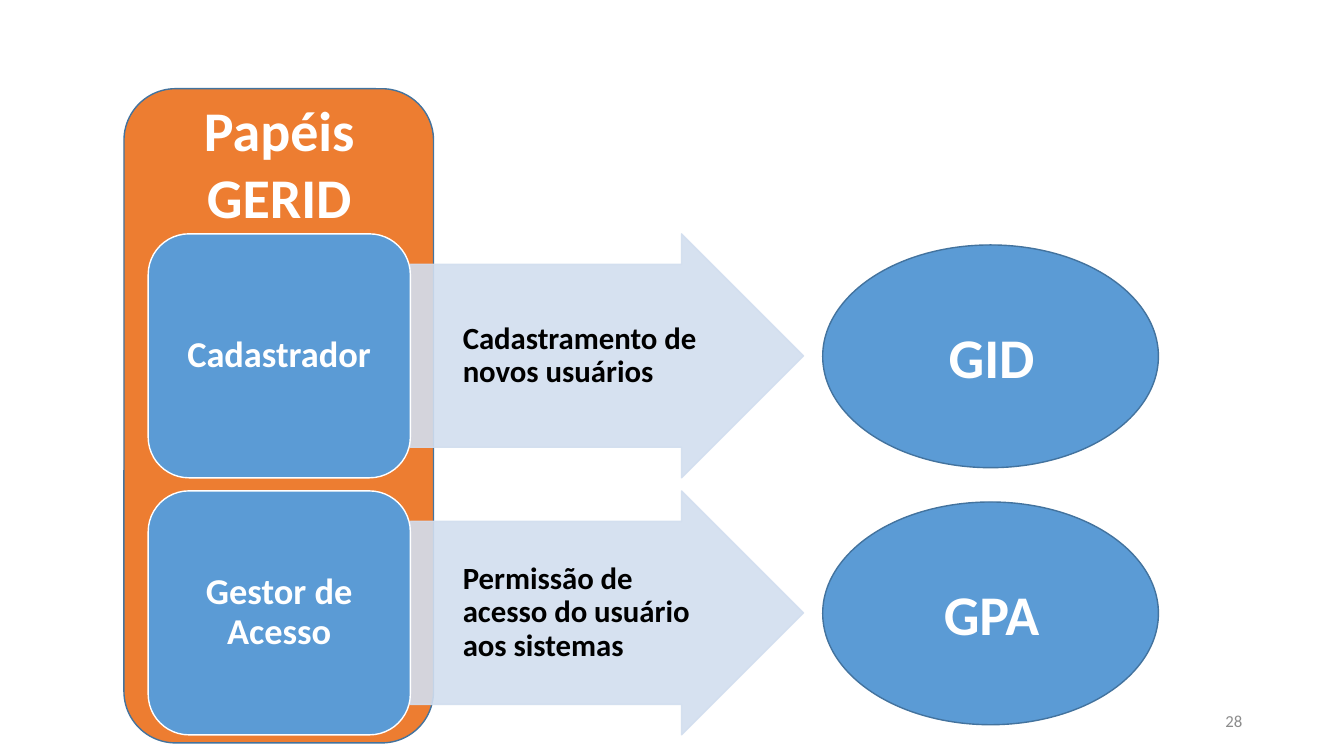
from dataclasses import dataclass

from lxml import etree
from pptx import Presentation
from pptx.dml.color import RGBColor
from pptx.enum.shapes import MSO_SHAPE
from pptx.enum.text import MSO_ANCHOR, MSO_AUTO_SIZE, PP_ALIGN
from pptx.oxml.ns import qn
from pptx.util import Inches, Pt

ROUNDED, ARROW, OVAL = MSO_SHAPE.ROUNDED_RECTANGLE, MSO_SHAPE.RIGHT_ARROW, MSO_SHAPE.OVAL
LEFT, CENTER, RIGHT = PP_ALIGN.LEFT, PP_ALIGN.CENTER, PP_ALIGN.RIGHT
TOP, MIDDLE = MSO_ANCHOR.TOP, MSO_ANCHOR.MIDDLE
FIT_SHAPE = MSO_AUTO_SIZE.SHAPE_TO_FIT_TEXT


@dataclass(frozen=True)
class Theme:
    """Colours, font and type sizes of the slide."""
    font: str = "Calibri"
    orange: str = "ED7D31"
    blue: str = "5B9BD5"
    outline: str = "43739E"
    pale: str = "D2DEEF"
    white: str = "FFFFFF"
    black: str = "000000"
    grey: str = "8C8C8C"
    title: int = 40
    role: int = 26
    task: int = 22
    number: int = 12


THEME = Theme()
FIRST_ROW, ROW_STEP = 2.32, 2.55
ROWS = [
    ("Cadastrador", "Cadastramento de novos usuários", "GID"),
    ("Gestor de Acesso", "Permissão de acesso do usuário aos sistemas", "GPA"),
]


def write(shape, text, size, color=THEME.white, bold=True, align=CENTER,
          anchor=TOP, margins=(0.1, 0.05), indent=0, spacing=1.0):
    """Put one formatted paragraph into a shape."""
    frame = shape.text_frame
    frame.word_wrap = True
    frame.vertical_anchor = anchor
    frame.margin_left = frame.margin_right = Inches(margins[0])
    frame.margin_top = frame.margin_bottom = Inches(margins[1])
    paragraph = frame.paragraphs[0]
    paragraph.alignment = align
    paragraph.line_spacing = spacing
    if indent:
        properties = paragraph._p.get_or_add_pPr()
        properties.set("marL", str(Inches(indent)))
        properties.set("indent", "0")
    run = paragraph.add_run()
    run.text = text
    run.font.name = THEME.font
    run.font.size = Pt(size)
    run.font.bold = bold
    run.font.color.rgb = RGBColor.from_string(color)


def add_panel(slide, kind, box, fill, line, adjustments=(), opacity=100):
    """Add a filled and outlined preset shape."""
    panel = slide.shapes.add_shape(kind, *map(Inches, box))
    panel.shadow.inherit = False
    panel.fill.solid()
    panel.fill.fore_color.rgb = RGBColor.from_string(fill)
    panel.line.color.rgb = RGBColor.from_string(line)
    panel.line.width = Pt(1)
    for index, value in enumerate(adjustments):
        panel.adjustments[index] = value
    if opacity < 100:
        for color in panel._element.spPr.iter(qn("a:srgbClr")):
            etree.SubElement(color, qn("a:alpha")).set("val", str(opacity * 1000))
    return panel


def add_label(slide, box, text, size, grow=True, **style):
    """Add a text box with one paragraph."""
    label = slide.shapes.add_textbox(*map(Inches, box))
    write(label, text, size, **style)
    if grow:
        label.text_frame.auto_size = FIT_SHAPE


def add_role_row(slide, top, role, task, system):
    """Add a role, the arrow with its task and the system it leads to."""
    task_arrow = add_panel(slide, ARROW, (4.07, top, 3.9, 2.42), THEME.pale,
                           THEME.pale, (0.75, 0.5), opacity=90)
    write(task_arrow, task, THEME.task, color=THEME.black, align=LEFT,
          anchor=MIDDLE, margins=(0.02, 0.02), indent=0.5, spacing=0.9)
    role_card = add_panel(slide, ROUNDED, (1.47, top, 2.6, 2.42), THEME.blue,
                          THEME.white, (0.167,))
    write(role_card, role, THEME.role, anchor=MIDDLE, margins=(0.11, 0.05),
          spacing=0.9)
    add_panel(slide, OVAL, (8.16, top + 0.11, 3.33, 2.21), THEME.blue, THEME.outline)
    add_label(slide, (8.85, top + 0.83, 1.97, 0.77), system, THEME.title)


def main():
    """Build the slide and save it."""
    deck = Presentation()
    deck.slide_width, deck.slide_height = Inches(13.33), Inches(7.5)
    slide = deck.slides.add_slide(deck.slide_layouts[6])
    add_panel(slide, ROUNDED, (1.23, 0.88, 3.07, 6.49), THEME.orange, THEME.outline)
    add_label(slide, (1.67, 0.9, 2.2, 1.45), "Papéis GERID", THEME.title)
    for index, row in enumerate(ROWS):
        add_role_row(slide, FIRST_ROW + index * ROW_STEP, *row)
    add_label(slide, (9.42, 6.95, 3, 0.4), "28", THEME.number, grow=False,
              color=THEME.grey, bold=False, align=RIGHT, anchor=MIDDLE)
    deck.save("out.pptx")


if __name__ == "__main__":
    main()
